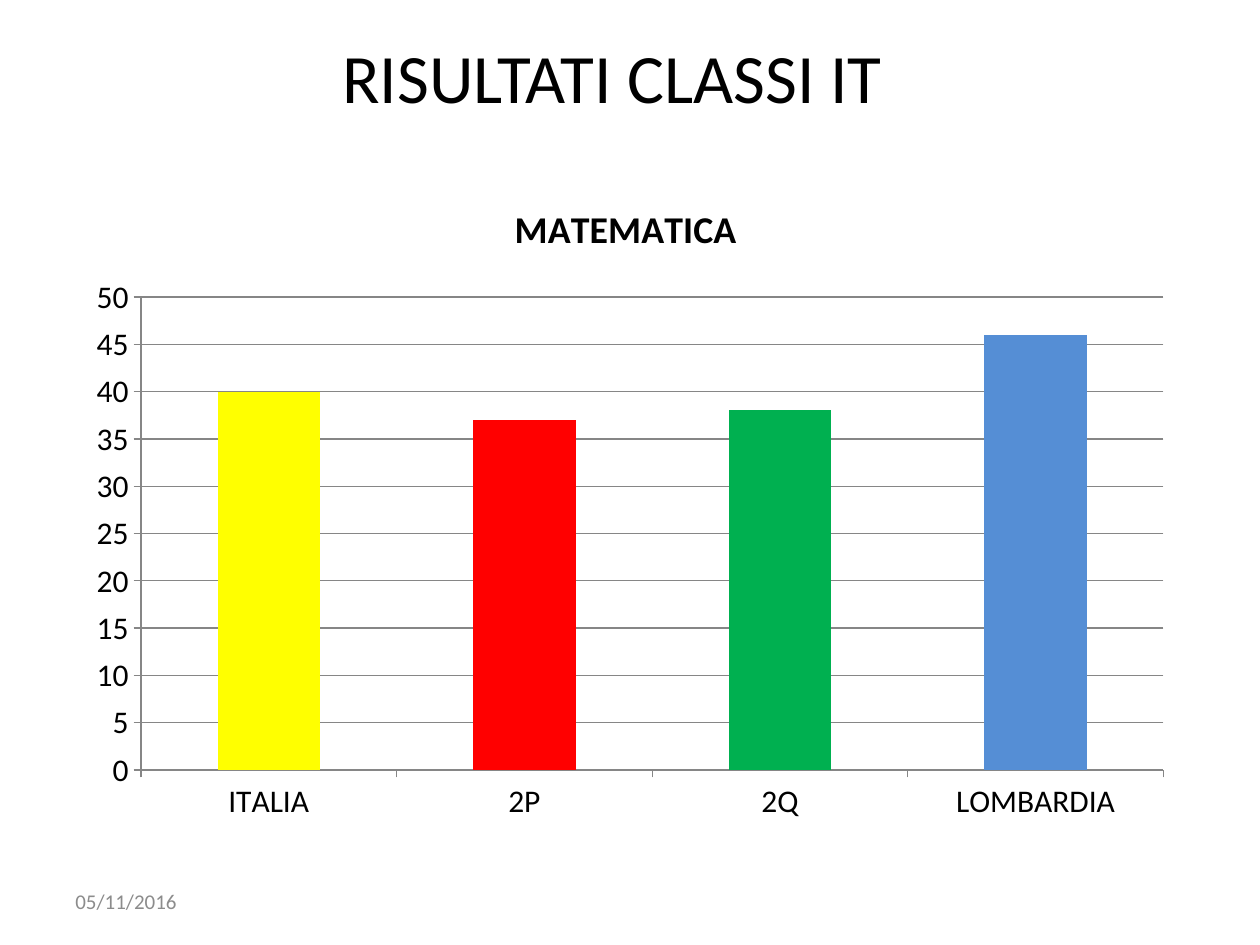
from lxml import etree
from pptx import Presentation
from pptx.chart.data import CategoryChartData
from pptx.dml.color import RGBColor
from pptx.enum.chart import XL_CHART_TYPE as Kind, XL_TICK_MARK as Tick
from pptx.enum.text import MSO_ANCHOR as Anchor, PP_ALIGN as Align
from pptx.oxml.ns import qn
from pptx.util import Inches, Pt

FACE = "Calibri"
BLACK = RGBColor(0x00, 0x00, 0x00)
GREY = RGBColor(0x8C, 0x8C, 0x8C)
LINE = RGBColor(0x86, 0x86, 0x86)
YELLOW = RGBColor(0xFF, 0xFF, 0x00)
RED = RGBColor(0xFF, 0x00, 0x00)
GREEN = RGBColor(0x00, 0xB0, 0x50)
BLUE = RGBColor(0x55, 0x8E, 0xD5)

SCORES = [
    ("ITALIA", 40, YELLOW),
    ("2P", 37, RED),
    ("2Q", 38, GREEN),
    ("LOMBARDIA", 46, BLUE),
]


def style(font, size, color, bold=False):
    font.name, font.size, font.bold = FACE, Pt(size), bold
    font.color.rgb = color


def write(shape, text, size, color, align):
    frame = shape.text_frame
    frame.word_wrap = True
    frame.vertical_anchor = Anchor.MIDDLE
    para = frame.paragraphs[0]
    para.text = text
    para.alignment = align
    style(para.font, size, color)


def add_title(slide, box):
    title = slide.shapes.title
    title.left, title.top, title.width, title.height = box
    write(title, "RISULTATI CLASSI IT ", 39.6, BLACK, Align.CENTER)


def set_plot(chart, **parts):
    """Fix the inner plot area, in fractions of the chart."""
    area = chart.plots[0]._element.getparent()
    for old in area.findall(qn("c:layout")):
        area.remove(old)
    layout = etree.Element(qn("c:layout"))
    area.insert(0, layout)
    manual = etree.SubElement(layout, qn("c:manualLayout"))
    rules = {"layoutTarget": "inner", "xMode": "edge", "yMode": "edge"}
    for name, value in (rules | parts).items():
        etree.SubElement(manual, qn("c:" + name)).set("val", str(value))


def add_scores(slide, box):
    names, values, colors = zip(*SCORES)
    data = CategoryChartData()
    data.categories = names
    data.add_series("Series 1", values)
    chart = slide.shapes.add_chart(Kind.COLUMN_CLUSTERED, *box, data).chart
    style(chart.font, 18, BLACK)
    chart.has_legend = False
    chart.has_title = True
    head = chart.chart_title.text_frame.paragraphs[0]
    head.text = "MATEMATICA "
    style(head.font, 21.6, BLACK, bold=True)
    set_plot(chart, x=0.06, y=0.185, w=0.92, h=0.718)

    plot = chart.plots[0]
    plot.gap_width = 150
    plot.vary_by_categories = False
    for i, color in enumerate(colors):
        fill = plot.series[0].points[i].format.fill
        fill.solid()
        fill.fore_color.rgb = color

    scale = chart.value_axis
    scale.minimum_scale, scale.maximum_scale, scale.major_unit = 0, 50, 5
    scale.has_major_gridlines = True
    for axis in (scale, chart.category_axis):
        axis.major_tick_mark = Tick.OUTSIDE
        axis.minor_tick_mark = Tick.NONE
    for part in (scale, chart.category_axis, scale.major_gridlines):
        part.format.line.color.rgb = LINE
        part.format.line.width = Pt(0.75)


def add_date(slide, box):
    write(slide.shapes.add_textbox(*box), "05/11/2016", 12, GREY, Align.LEFT)


def area(*sides):
    return [Inches(side) for side in sides]


def main():
    deck = Presentation()
    deck.slide_width, deck.slide_height = Inches(10), Inches(7.5)
    slide = deck.slides.add_slide(deck.slide_layouts[5])
    add_title(slide, area(0.67, 0.21, 8.5, 0.79))
    add_scores(slide, area(0.59, 1.39, 8.82, 5.23))
    add_date(slide, area(0.5, 6.95, 2.33, 0.4))
    deck.save("out.pptx")


if __name__ == "__main__":
    main()
